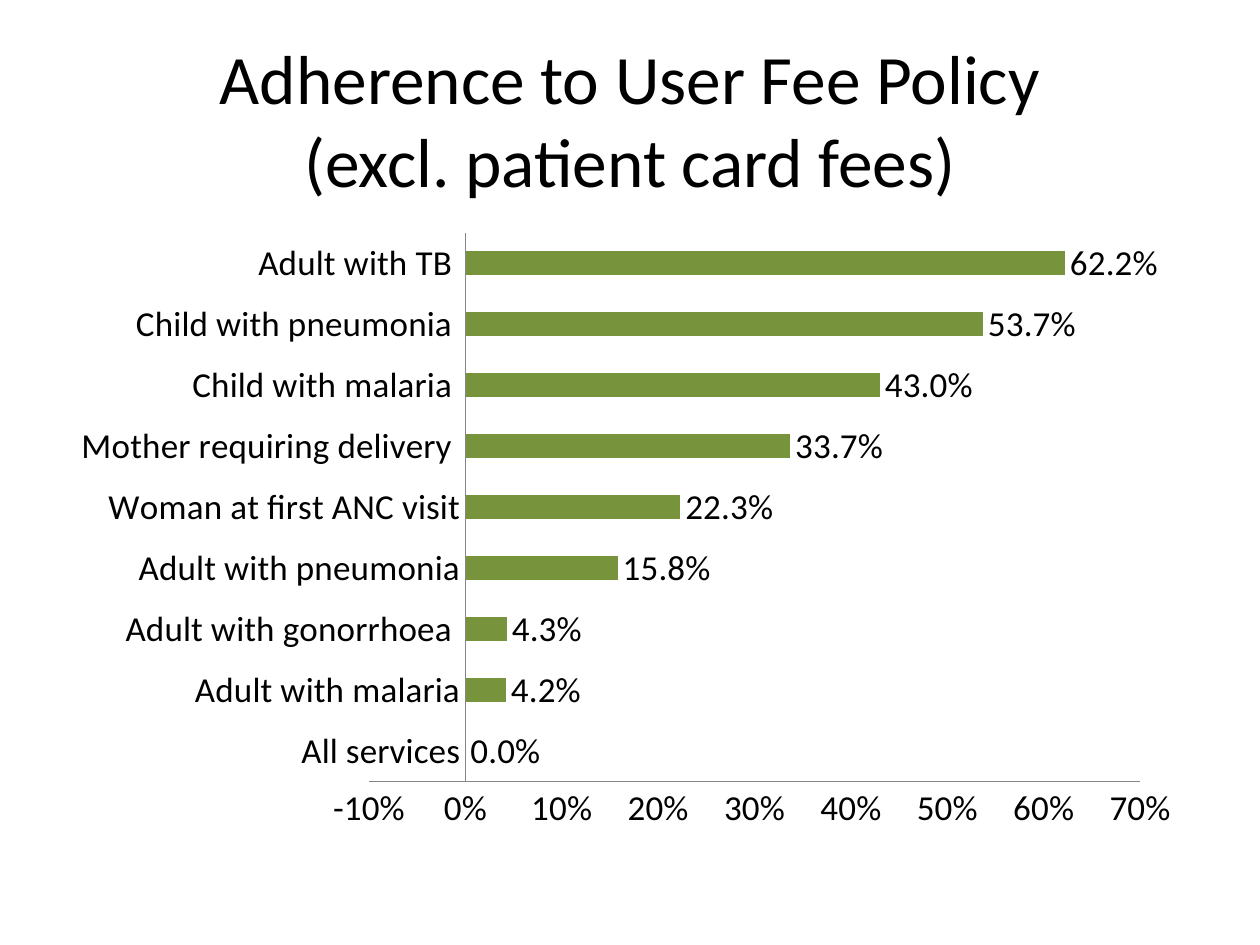
from lxml import etree
from pptx import Presentation
from pptx.chart.data import CategoryChartData
from pptx.dml.color import RGBColor
from pptx.enum.chart import XL_CHART_TYPE as ChartType
from pptx.enum.chart import XL_LABEL_POSITION as LabelPosition
from pptx.enum.chart import XL_TICK_MARK as TickMark
from pptx.enum.text import MSO_ANCHOR as Anchor
from pptx.enum.text import MSO_AUTO_SIZE as AutoSize
from pptx.enum.text import PP_ALIGN as Align
from pptx.oxml.ns import qn
from pptx.util import Inches, Pt

BLACK = RGBColor(0x00, 0x00, 0x00)
GREEN = RGBColor(0x77, 0x93, 0x3C)
GREY = RGBColor(0x86, 0x86, 0x86)
FONT = "Calibri"
WIDTH, HEIGHT = Inches(10), Inches(7.5)
TITLE_BOX = (0.05, 0.04, 0.9, 0.17)
CHART_BOX = (0.05, 0.233, 0.9, 0.66)
PLOT_SHARES = {"x": 0.27, "y": 0.02, "w": 0.68, "h": 0.88}
HEADING = "Adherence to User Fee Policy\v(excl. patient card fees)"
ADHERENCE = {
    "All services": 0,
    "Adult with malaria": 0.042,
    "Adult with gonorrhoea ": 0.043,
    "Adult with pneumonia": 0.158,
    "Woman at first ANC visit": 0.223,
    "Mother requiring delivery ": 0.337,
    "Child with malaria ": 0.43,
    "Child with pneumonia ": 0.537,
    "Adult with TB ": 0.622,
}


def apply(target, formats):
    """Set every attribute in formats on the target."""
    for name, value in formats.items():
        setattr(target, name, value)


def on_slide(box):
    """Turn shares of the slide into left, top, width and height."""
    return [int(share * side) for share, side in zip(box, (WIDTH, HEIGHT) * 2)]


def style_font(font, size):
    """Give a font the slide's typeface and colour."""
    apply(font, {"name": FONT, "size": Pt(size), "bold": False})
    font.color.rgb = BLACK


def place_heading(slide, box):
    """Fill the title placeholder and fit it to the box."""
    heading = slide.shapes.title
    apply(heading, dict(zip(("left", "top", "width", "height"), on_slide(box))))
    frame = heading.text_frame
    apply(frame, {"text": HEADING, "word_wrap": True,
                  "auto_size": AutoSize.NONE, "vertical_anchor": Anchor.MIDDLE})
    line = frame.paragraphs[0]
    line.alignment = Align.CENTER
    for run in line.runs:
        style_font(run.font, 39.6)


def fix_plot_area(chart, shares):
    """Fix the inner plot area at the given shares of the chart."""
    plot_area = chart.plots[0]._element.getparent()
    layout = plot_area.find(qn("c:layout"))
    if layout is None:
        layout = etree.Element(qn("c:layout"))
        plot_area.insert(0, layout)
    manual = etree.SubElement(layout, qn("c:manualLayout"))
    settings = {"layoutTarget": "inner", "xMode": "edge", "yMode": "edge", **shares}
    for tag, value in settings.items():
        etree.SubElement(manual, qn(f"c:{tag}")).set("val", str(value))


def place_adherence_chart(slide, box):
    """Draw the adherence bars with their axes and labels."""
    adherence = CategoryChartData(number_format="0.0%")
    adherence.categories = list(ADHERENCE)
    adherence.add_series("Series 1", list(ADHERENCE.values()))
    chart = slide.shapes.add_chart(
        ChartType.BAR_CLUSTERED, *on_slide(box), adherence).chart
    apply(chart, {"has_legend": False, "has_title": False})
    style_font(chart.font, 20)

    for axis in (chart.category_axis, chart.value_axis):
        apply(axis, {"has_major_gridlines": False,
                     "major_tick_mark": TickMark.NONE,
                     "minor_tick_mark": TickMark.NONE})
        axis.format.line.color.rgb = GREY
        axis.format.line.width = Pt(0.75)
    apply(chart.value_axis, {"minimum_scale": -0.1, "maximum_scale": 0.7,
                             "major_unit": 0.1})
    apply(chart.value_axis.tick_labels, {"number_format": "0%",
                                         "number_format_is_linked": False})

    bars = chart.plots[0]
    apply(bars, {"gap_width": 150, "vary_by_categories": False,
                 "has_data_labels": True})
    apply(bars.data_labels, {"show_value": True, "number_format": "0.0%",
                             "number_format_is_linked": False,
                             "position": LabelPosition.OUTSIDE_END})
    fill = bars.series[0].format.fill
    fill.solid()
    fill.fore_color.rgb = GREEN
    fix_plot_area(chart, PLOT_SHARES)


def main():
    """Build the slide and save it."""
    deck = Presentation()
    apply(deck, {"slide_width": WIDTH, "slide_height": HEIGHT})
    slide = deck.slides.add_slide(deck.slide_layouts.get_by_name("Title Only"))
    place_heading(slide, TITLE_BOX)
    place_adherence_chart(slide, CHART_BOX)
    deck.save("out.pptx")


if __name__ == "__main__":
    main()
